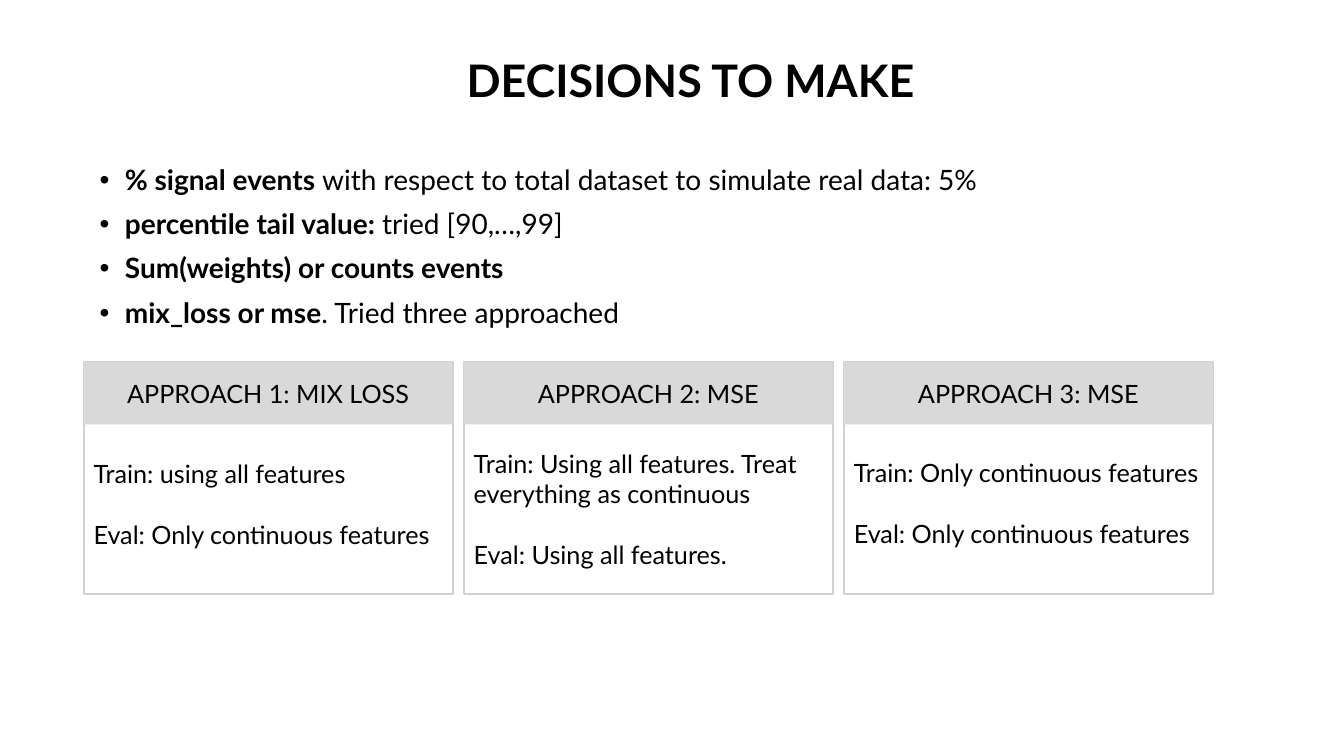
from dataclasses import dataclass

from lxml import etree
from pptx import Presentation
from pptx.dml.color import RGBColor
from pptx.enum.shapes import MSO_SHAPE
from pptx.enum.text import MSO_ANCHOR, PP_ALIGN
from pptx.oxml.ns import qn
from pptx.util import Inches, Pt

RECT = MSO_SHAPE.RECTANGLE
MIDDLE = MSO_ANCHOR.MIDDLE
LEFT = PP_ALIGN.LEFT
CENTER = PP_ALIGN.CENTER


@dataclass(frozen=True)
class Theme:
    font: str = "Lato"
    ink: RGBColor = RGBColor(0, 0, 0)
    paper: RGBColor = RGBColor(255, 255, 255)
    bar: RGBColor = RGBColor(0xD9, 0xD9, 0xD9)
    edge: RGBColor = RGBColor(0xD1, 0xD1, 0xD1)
    title: int = 32
    list: int = 20
    card: int = 18


class Deck:
    def __init__(self, theme, slide):
        self.theme = theme
        self.slide = slide

    def run(self, para, text, size, bold=False):
        run = para.add_run()
        run.text = text
        run.font.name = self.theme.font
        run.font.size = Pt(size)
        run.font.bold = bold
        run.font.color.rgb = self.theme.ink

    def title(self, text, left, top, width, height):
        box = self.slide.shapes.title
        box.left, box.top = Inches(left), Inches(top)
        box.width, box.height = Inches(width), Inches(height)
        box.text_frame.vertical_anchor = MIDDLE
        para = box.text_frame.paragraphs[0]
        para.alignment = CENTER
        self.run(para, text, self.theme.title, True)

    def frame(self, shapes, left, top, width, height):
        box = shapes.add_textbox(Inches(left), Inches(top), Inches(width), Inches(height))
        box.text_frame.word_wrap = True
        return box.text_frame

    def bullets(self, items, left, top, width, height):
        frame = self.frame(self.slide.shapes, left, top, width, height)
        for i, runs in enumerate(items):
            para = frame.add_paragraph() if i else frame.paragraphs[0]
            para.line_spacing = 0.9
            para.space_before = Pt(10 if i else 0)
            props = para._p.get_or_add_pPr()
            props.set("marL", str(Inches(0.25)))
            props.set("indent", str(-Inches(0.25)))
            etree.SubElement(props, qn("a:buFont")).set("typeface", "Arial")
            etree.SubElement(props, qn("a:buChar")).set("char", "•")
            for text, bold in runs:
                self.run(para, text, self.theme.list, bold)

    def rect(self, shapes, left, top, width, height, fill, line=None):
        rect = shapes.add_shape(RECT, Inches(left), Inches(top), Inches(width), Inches(height))
        rect.shadow.inherit = False
        rect.fill.solid()
        rect.fill.fore_color.rgb = fill
        if line is None:
            rect.line.fill.background()
        else:
            rect.line.color.rgb = line
            rect.line.width = Pt(1.5)

    def lines(self, shapes, texts, left, top, width, height, align=LEFT):
        frame = self.frame(shapes, left, top, width, height)
        for i, text in enumerate(texts):
            para = frame.add_paragraph() if i else frame.paragraphs[0]
            para.alignment = align
            para.space_before = Pt(21.6 if i else 0)
            self.run(para, text, self.theme.card)

    def card(self, left, top, width, head, body, start, height):
        shapes = self.slide.shapes.add_group_shape().shapes
        self.rect(shapes, left, top, width, 2.3, self.theme.paper, self.theme.edge)
        self.rect(shapes, left, top, width, 0.62, self.theme.bar)
        self.lines(shapes, [head], left, top + 0.11, width, 0.4, CENTER)
        self.lines(shapes, body, left, start, width, height)


def main():
    show = Presentation()
    show.slide_width, show.slide_height = Inches(13.33), Inches(7.5)
    deck = Deck(Theme(), show.slides.add_slide(show.slide_layouts[5]))
    deck.title("DECISIONS TO MAKE", 1.97, 0.47, 9.76, 0.64)
    deck.bullets([
        [("% signal events ", True),
         ("with respect to total dataset to simulate real data: 5%", False)],
        [("percentile tail value: ", True), ("tried [90,…,99]", False)],
        [("Sum(weights) or counts events", True)],
        [("mix_loss or mse", True), (". Tried three approached", False)],
    ], 0.89, 1.6, 10.45, 1.84)
    cards = [
        ("APPROACH 1: MIX LOSS",
         ["Train: using all features", "Eval: Only continuous features"], 4.5, 1.01),
        ("APPROACH 2: MSE",
         ["Train: Using all features. Treat everything as continuous",
          "Eval: Using all features."], 4.4, 1.31),
        ("APPROACH 3: MSE",
         ["Train: Only continuous features", "Eval: Only continuous features"], 4.49, 1.01),
    ]
    for i, (head, body, start, height) in enumerate(cards):
        deck.card(0.83 + i * 3.77, 3.59, 3.66, head, body, start, height)
    show.save("out.pptx")


if __name__ == "__main__":
    main()
